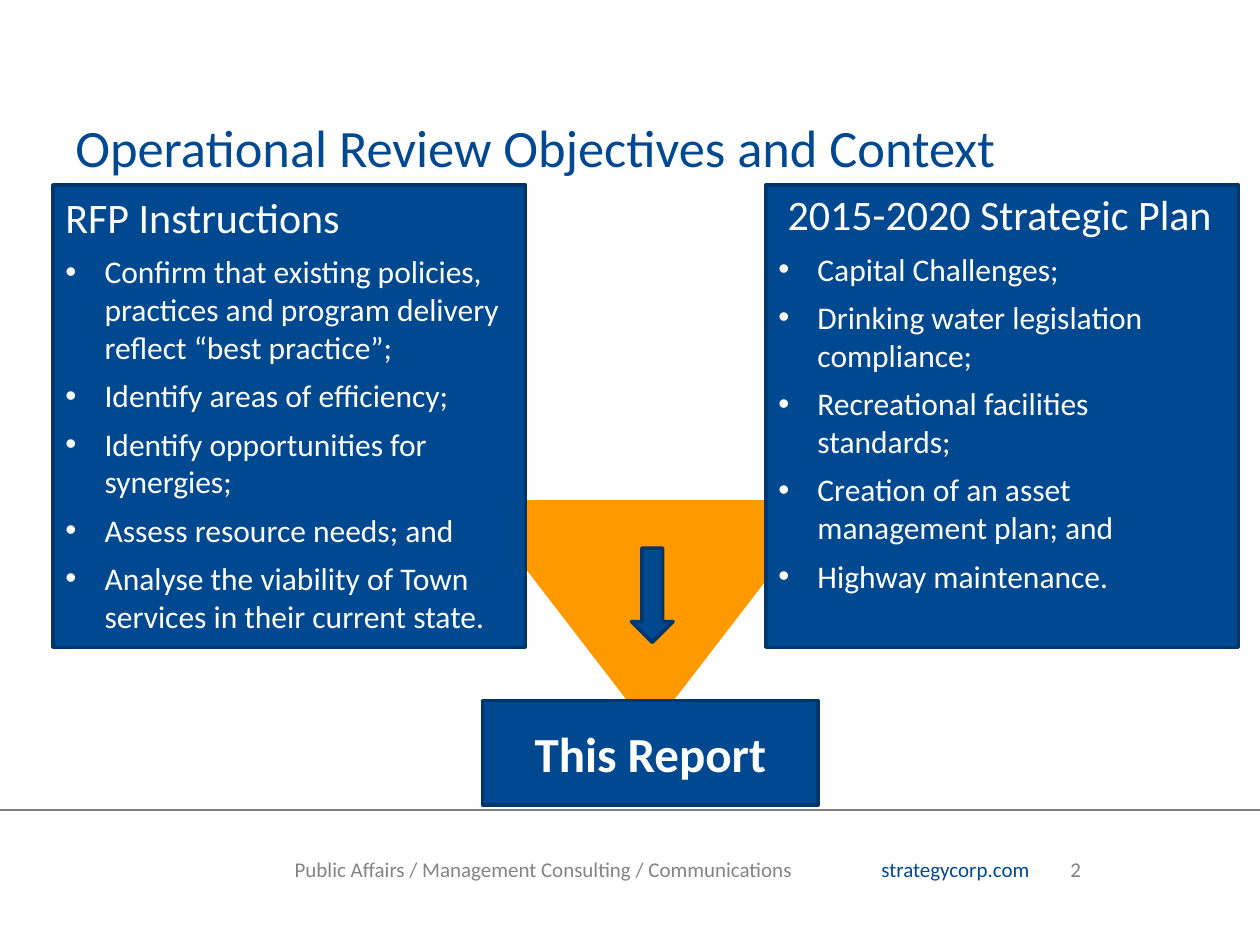
import pptx
import pptx.dml.color
import pptx.enum.shapes
import pptx.enum.text
import pptx.oxml.ns
import pptx.util
from lxml import etree

Cm, Pt = pptx.util.Cm, pptx.util.Pt
RGBColor = pptx.dml.color.RGBColor
SHAPE = pptx.enum.shapes.MSO_SHAPE
ANCHOR = pptx.enum.text.MSO_ANCHOR
ALIGN = pptx.enum.text.PP_ALIGN
qn = pptx.oxml.ns.qn

BLUE = RGBColor(0x00, 0x49, 0x90)
NAVY = RGBColor(0x00, 0x36, 0x6B)
ORANGE = RGBColor(0xFF, 0x99, 0x00)
WHITE = RGBColor(0xFF, 0xFF, 0xFF)
GREY = RGBColor(0x7F, 0x7F, 0x7F)
LIGHT_GREY = RGBColor(0x84, 0x84, 0x84)

INSTRUCTIONS = [
    "Confirm that existing policies, practices and program delivery reflect “best practice”;",
    "Identify areas of efficiency;",
    "Identify opportunities for synergies;",
    "Assess resource needs; and",
    "Analyse the viability of Town services in their current state.",
]
PLAN = [
    "Capital Challenges;",
    "Drinking water legislation compliance;",
    "Recreational facilities standards;",
    "Creation of an asset management plan; and",
    "Highway maintenance.",
]


class Deck:
    FONT = "Calibri"

    def __init__(self, prs):
        self.s = prs.slides.add_slide(prs.slide_layouts[6])

    def format(self, r, size, color, bold=False):
        r.font.name, r.font.size, r.font.bold = self.FONT, Pt(size), bold
        r.font.color.rgb = color

    def indent(self, p, left, first=0):
        pPr = p._p.get_or_add_pPr()
        pPr.set("marL", str(Cm(left)))
        pPr.set("indent", str(Cm(first)))
        return pPr

    def text(self, x, y, w, h, text, size, color, left):
        """Add a text box without insets and return its paragraph."""
        tf = self.s.shapes.add_textbox(Cm(x), Cm(y), Cm(w), Cm(h)).text_frame
        tf.word_wrap = True
        tf.margin_left = tf.margin_top = tf.margin_right = tf.margin_bottom = 0
        p = tf.paragraphs[0]
        p.text = text
        self.indent(p, left)
        self.format(p.runs[0], size, color)
        return p

    def shape(self, kind, x, y, w, h, fill=BLUE, line=NAVY):
        sp = self.s.shapes.add_shape(kind, Cm(x), Cm(y), Cm(w), Cm(h))
        sp.shadow.inherit = False
        sp.fill.solid()
        sp.fill.fore_color.rgb = fill
        if line is None:
            sp.line.fill.background()
        else:
            sp.line.color.rgb = line
            sp.line.width = Pt(2)
        return sp

    def panel(self, x, heading, items, heading_indent=0, top=0.13):
        """Add a box with a heading above a bulleted list."""
        tf = self.shape(SHAPE.RECTANGLE, x, 3.73, 9.53, 9.32).text_frame
        tf.word_wrap = True
        tf.vertical_anchor = ANCHOR.TOP
        tf.margin_top = Cm(top)
        tf.text = "\n".join([heading, *items])
        for i, p in enumerate(tf.paragraphs):
            if i == 0:
                self.indent(p, heading_indent)
            else:
                pPr = self.indent(p, 0.79, -0.79)
                etree.SubElement(pPr, qn("a:buFont")).set("typeface", "Arial")
                etree.SubElement(pPr, qn("a:buChar")).set("char", "•")
            p.alignment = ALIGN.LEFT
            p.space_after = Pt(6)
            self.format(p.runs[0], 18 if i else 24, WHITE)

    def label(self, x, y, w, h, text):
        tf = self.shape(SHAPE.RECTANGLE, x, y, w, h).text_frame
        tf.word_wrap = True
        tf.vertical_anchor = ANCHOR.MIDDLE
        tf.text = text
        tf.paragraphs[0].alignment = ALIGN.CENTER
        self.format(tf.paragraphs[0].runs[0], 28, WHITE, bold=True)

    def rule(self, y, width):
        c = self.s.shapes.add_connector(
            pptx.enum.shapes.MSO_CONNECTOR.STRAIGHT, 0, Cm(y), Cm(width), Cm(y))
        c.line.color.rgb = GREY
        c.line.width = Pt(1)
        etree.SubElement(c._element.spPr, qn("a:effectLst"))

    def footer(self):
        p = self.text(17.75, 17.27, 6.38, 0.51, "strategycorp.com\t", 12, BLUE, 0.02)
        tabs = etree.SubElement(p._p.get_or_add_pPr(), qn("a:tabLst"))
        etree.SubElement(tabs, qn("a:tab"), pos=str(Cm(5.59)), algn="l")
        r = p.add_run()
        r.text = "2"
        self.format(r, 12, GREY)
        self.text(5.92, 17.27, 11.23, 0.51,
                  "Public Affairs / Management Consulting / Communications",
                  12, LIGHT_GREY, 0.02)
        self.rule(16.33, 25.4)


def main():
    prs = pptx.Presentation()
    prs.slide_width, prs.slide_height = Cm(25.4), Cm(19.05)
    deck = Deck(prs)
    deck.footer()
    funnel = deck.shape(SHAPE.ISOSCELES_TRIANGLE, 9.53, 10.08, 7.16, 4.65, ORANGE, None)
    funnel.rotation = 180
    deck.text(1.27, 2.31, 22.94, 0.86, "Operational Review Objectives and Context",
              30, BLUE, 0.25)
    deck.panel(15.44, "2015-2020 Strategic Plan", PLAN, heading_indent=0.19, top=0.08)
    deck.panel(1.07, "RFP Instructions", INSTRUCTIONS)
    deck.label(9.73, 14.12, 6.76, 2.11, "This Report")
    deck.shape(SHAPE.DOWN_ARROW, 12.73, 11.05, 0.84, 1.9)
    prs.save("out.pptx")


if __name__ == "__main__":
    main()
